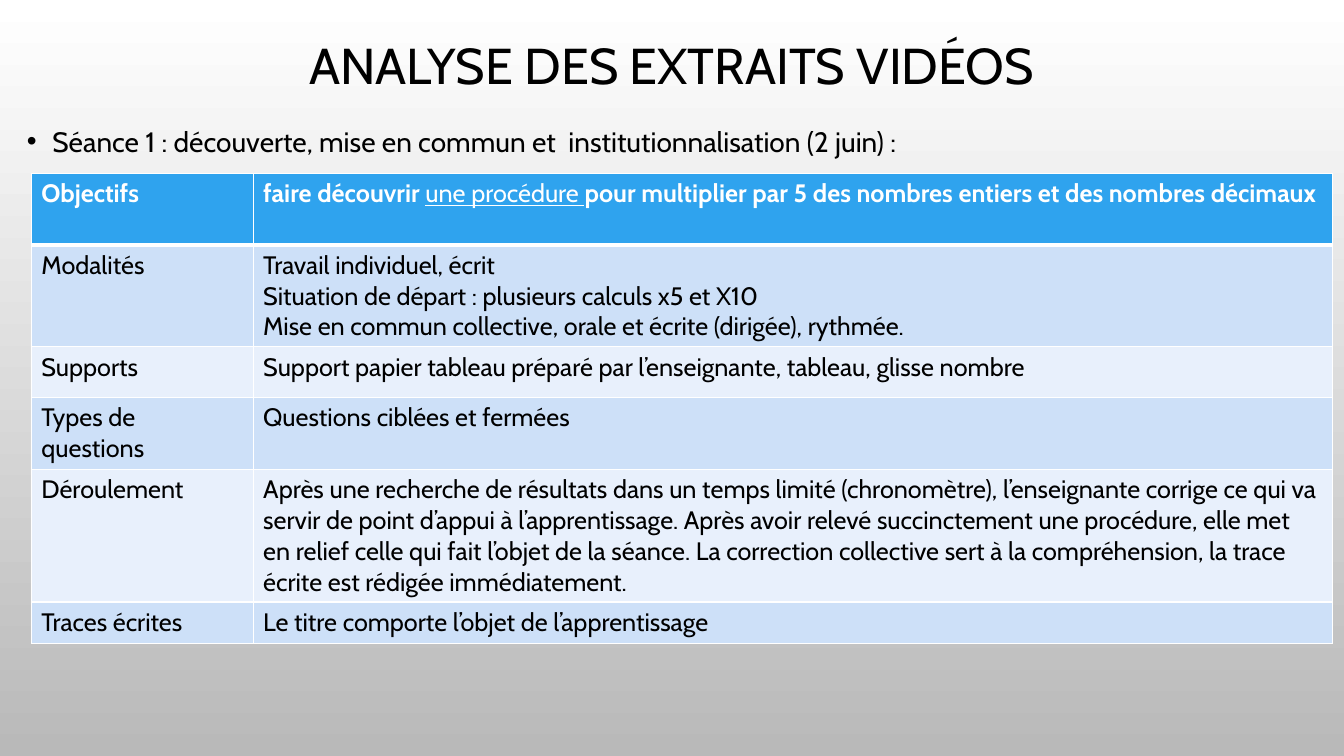
from lxml.etree import SubElement
from pptx import Presentation
from pptx.dml.color import RGBColor
from pptx.enum.text import MSO_ANCHOR as Anchor, PP_ALIGN as Align
from pptx.oxml.ns import qn
from pptx.util import Cm, Pt

FONT = "Cabin"
BLACK, WHITE = "000000", "FFFFFF"
HEADER_BLUE, BAND_DARK, BAND_LIGHT = "2FA3EE", "CDE0F8", "E8F0FC"

COLUMN_WIDTHS = [5.59, 27.2]
ROW_HEIGHTS = [1.8, 2.57, 1.27, 1.82, 3.34, 1.04]
OBJECTIVE_PARTS = [
    ("faire découvrir ", True),
    ("une procédure ", False),
    ("pour multiplier par 5 des nombres entiers et des nombres décimaux", True),
]
SESSION_ROWS = [
    ("Modalités",
     "Travail individuel, écrit\n"
     "Situation de départ : plusieurs calculs x5 et X10\n"
     "Mise en commun collective, orale et écrite (dirigée), rythmée."),
    ("Supports",
     "Support papier tableau préparé par l’enseignante, tableau, glisse nombre"),
    ("Types de questions", "Questions ciblées et fermées"),
    ("Déroulement",
     "Après une recherche de résultats dans un temps limité (chronomètre), "
     "l’enseignante corrige ce qui va servir de point d’appui à l’apprentissage. "
     "Après avoir relevé succinctement une procédure, elle met en relief celle "
     "qui fait l’objet de la séance. La correction collective sert à la "
     "compréhension, la trace écrite est rédigée immédiatement."),
    ("Traces écrites", "Le titre comporte l’objet de l’apprentissage"),
]


def color(hex_code):
    return RGBColor.from_string(hex_code)


def format_run(run, size, hex_code, bold=False, underline=False):
    font = run.font
    font.name = FONT
    font.size = Pt(size)
    font.color.rgb = color(hex_code)
    font.bold = bold
    font.underline = underline


def format_text(frame, size, hex_code, bold=False):
    for paragraph in frame.paragraphs:
        for run in paragraph.runs:
            format_run(run, size, hex_code, bold)


def paint_background(slide):
    fill = slide.background.fill
    fill.gradient()
    fill.gradient_angle = 270
    for stop, position, shade in zip(fill.gradient_stops, (0, 1), (WHITE, "B9B9B9")):
        stop.position = position
        stop.color.rgb = color(shade)


def set_title(slide, text):
    title = slide.shapes.title
    title.left, title.top, title.width, title.height = Cm(2.54), Cm(0.58), Cm(28.78), Cm(2.26)
    frame = title.text_frame
    frame.text = text
    frame.vertical_anchor = Anchor.MIDDLE
    frame.paragraphs[0].alignment = Align.CENTER
    frame.paragraphs[0].line_spacing = 0.9
    format_text(frame, 36, BLACK)


def add_bullet(slide, text):
    frame = slide.shapes.add_textbox(Cm(0.43), Cm(2.84), Cm(32.66), Cm(14.68)).text_frame
    frame.word_wrap = True
    frame.text = text
    paragraph = frame.paragraphs[0]
    paragraph.line_spacing = 1.2
    properties = paragraph._p.get_or_add_pPr()
    properties.set("marL", str(Cm(0.64)))
    properties.set("indent", str(Cm(-0.64)))
    bullet_color = SubElement(properties, qn("a:buClr"))
    SubElement(bullet_color, qn("a:srgbClr"), val=BLACK)
    SubElement(properties, qn("a:buFont"), typeface="Arial")
    SubElement(properties, qn("a:buChar"), char="•")
    format_text(frame, 20, BLACK)


def style_cell(cell, fill_color, top=1, bottom=1):
    properties = cell._tc.get_or_add_tcPr()
    for side, width in zip("LRTB", (1, 1, top, bottom)):
        border = SubElement(properties, qn(f"a:ln{side}"), w=str(Pt(width)))
        SubElement(SubElement(border, qn("a:solidFill")), qn("a:srgbClr"), val=WHITE)
    cell.fill.solid()
    cell.fill.fore_color.rgb = color(fill_color)


def fill_header(table):
    label, objective = table.cell(0, 0), table.cell(0, 1)
    label.text_frame.text = "Objectifs"
    format_text(label.text_frame, 18, WHITE, bold=True)
    for text, bold in OBJECTIVE_PARTS:
        run = objective.text_frame.paragraphs[0].add_run()
        run.text = text
        format_run(run, 18, WHITE, bold, underline=not bold)
    for cell in (label, objective):
        style_cell(cell, HEADER_BLUE, bottom=3)


def add_session_table(slide):
    table = slide.shapes.add_table(
        len(ROW_HEIGHTS), len(COLUMN_WIDTHS), Cm(0.79), Cm(4.37),
        Cm(sum(COLUMN_WIDTHS)), Cm(sum(ROW_HEIGHTS))).table
    for column, width in zip(table.columns, COLUMN_WIDTHS):
        column.width = Cm(width)
    for row, height in zip(table.rows, ROW_HEIGHTS):
        row.height = Cm(height)
    fill_header(table)
    for row_number, texts in enumerate(SESSION_ROWS, start=1):
        band = BAND_DARK if row_number % 2 else BAND_LIGHT
        for column_number, text in enumerate(texts):
            cell = table.cell(row_number, column_number)
            cell.text_frame.text = text
            format_text(cell.text_frame, 18, BLACK)
            style_cell(cell, band, top=3 if row_number == 1 else 1)


def main():
    deck = Presentation()
    deck.slide_width, deck.slide_height = Cm(33.87), Cm(19.05)
    slide = deck.slides.add_slide(deck.slide_layouts[5])
    paint_background(slide)
    set_title(slide, "ANALYSE DES EXTRAITS VIDÉOS")
    add_bullet(slide, "Séance 1 : découverte, mise en commun et  institutionnalisation (2 juin) :")
    add_session_table(slide)
    deck.save("out.pptx")


if __name__ == "__main__":
    main()
